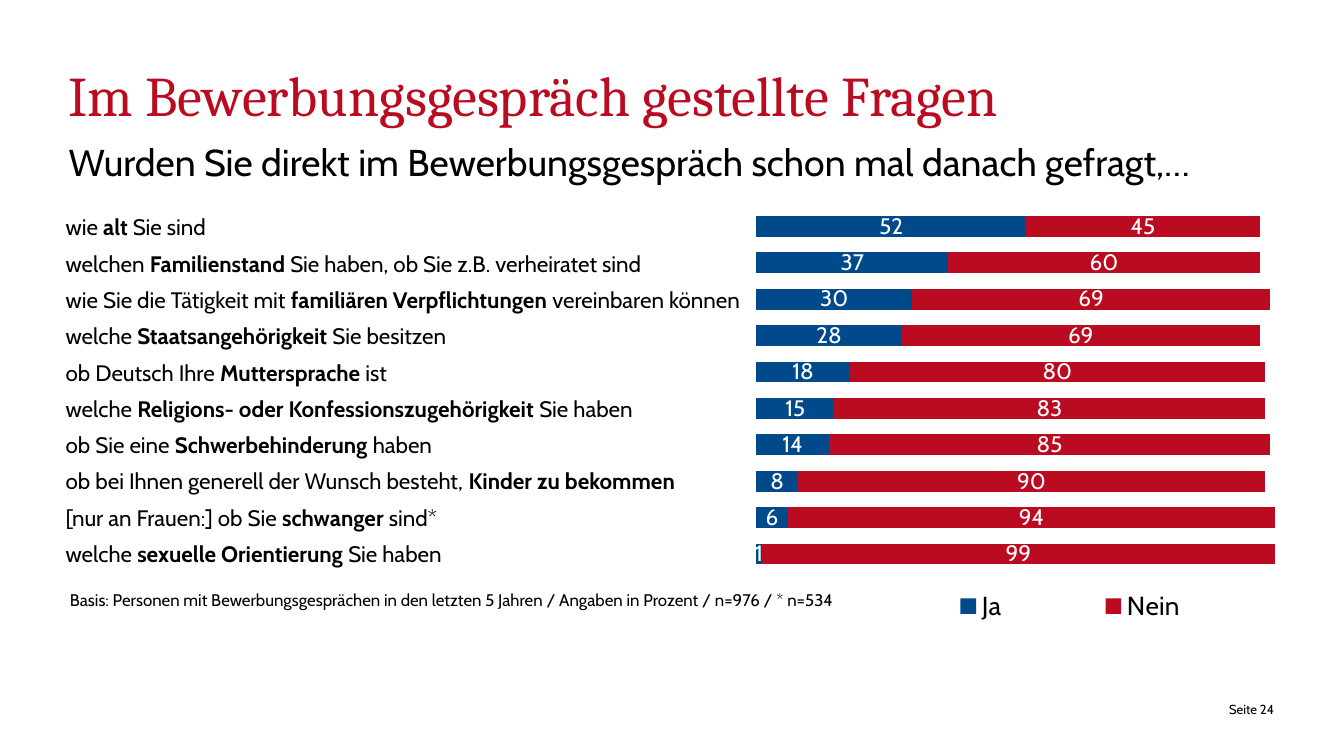
from pptx import Presentation
from pptx import util as u
from pptx.chart.data import CategoryChartData
from pptx.dml.color import RGBColor
from pptx.enum import chart as charts, text
from pptx.oxml import parse_xml
from pptx.oxml.ns import nsdecls

COLORS = {"black": "000000", "white": "FFFFFF", "red": "BB0B20", "blue": "00498B"}
QUESTIONS = [
    ("wie |alt| Sie sind", 52, 45),
    ("welchen |Familienstand| Sie haben, ob Sie z.B. verheiratet sind", 37, 60),
    ("wie Sie die Tätigkeit mit |familiären Verpflichtungen |vereinbaren können", 30, 69),
    ("welche |Staatsangehörigkeit| Sie besitzen", 28, 69),
    ("ob Deutsch Ihre |Muttersprache| ist", 18, 80),
    ("welche |Religions- oder Konfessionszugehörigkeit |Sie haben", 15, 83),
    ("ob Sie eine |Schwerbehinderung| haben", 14, 85),
    ("ob bei Ihnen generell der Wunsch besteht, |Kinder zu bekommen", 8, 90),
    ("[nur an Frauen:] ob Sie |schwanger| sind*", 6, 94),
    ("welche |sexuelle Orientierung |Sie haben", 1, 99),
]


class SlideBuilder:
    """Holds the style and the current slide and adds its elements."""

    def __init__(self, slide):
        self.slide = slide

    def style_font(self, font, size, color="black", name="Cabin"):
        font.size = u.Pt(size)
        font.name = name
        font.color.rgb = RGBColor.from_string(COLORS[color])

    def add_text(self, content, box, size, color="black", name="Cabin",
                 margins=(0, 0, 0, 0), align=text.PP_ALIGN.LEFT, spacing=None):
        shape = self.slide.shapes.add_textbox(*map(u.Inches, box))
        frame = shape.text_frame
        frame.word_wrap = True
        (frame.margin_left, frame.margin_top,
         frame.margin_right, frame.margin_bottom) = map(u.Inches, margins)
        paragraph = frame.paragraphs[0]
        paragraph.alignment = align
        paragraph.line_spacing = spacing
        self.style_font(paragraph.font, size, color, name)
        for index, part in enumerate(content.split("|")):
            run = paragraph.add_run()
            run.text = part
            if index % 2:
                run.font.bold = True

    def set_layout(self, element, x, y, width, height, inner=False):
        target = '<c:layoutTarget val="inner"/>' if inner else ""
        for old in element.findall("{*}layout"):
            element.remove(old)
        layout = parse_xml(
            f'<c:layout {nsdecls("c")}><c:manualLayout>{target}'
            '<c:xMode val="edge"/><c:yMode val="edge"/>'
            f'<c:x val="{x}"/><c:y val="{y}"/><c:w val="{width}"/><c:h val="{height}"/>'
            "</c:manualLayout></c:layout>")
        element.insert(0 if inner else 1, layout)

    def add_bars(self, rows, series_colors, box):
        data = CategoryChartData(number_format="0")
        data.categories = [str(number) for number in range(1, len(rows) + 1)]
        for column, name in enumerate(series_colors, start=1):
            data.add_series(name, [row[column] for row in reversed(rows)])
        chart = self.slide.shapes.add_chart(
            charts.XL_CHART_TYPE.BAR_STACKED, *map(u.Inches, box), data).chart
        self.style_font(chart.font, 12)
        chart.has_title = False
        chart.category_axis.visible = False
        axis = chart.value_axis
        axis.minimum_scale, axis.maximum_scale = 0, 100
        axis.has_major_gridlines = False
        axis.major_tick_mark = charts.XL_TICK_MARK.NONE
        axis.tick_label_position = charts.XL_TICK_LABEL_POSITION.NONE
        axis.format.line.fill.background()
        plot = chart.plots[0]
        plot.gap_width, plot.overlap = 75, 100
        plot.vary_by_categories = False
        for series, color in zip(plot.series, series_colors.values()):
            series.format.fill.solid()
            series.format.fill.fore_color.rgb = RGBColor.from_string(COLORS[color])
            labels = series.data_labels
            labels.show_value = True
            labels.number_format, labels.number_format_is_linked = "0", False
            labels.position = charts.XL_LABEL_POSITION.CENTER
            self.style_font(labels.font, 12, "white")
        chart.has_legend = True
        legend = chart.legend
        legend.position = charts.XL_LEGEND_POSITION.BOTTOM
        legend.include_in_layout = False
        self.style_font(legend.font, 14)
        self.set_layout(plot._element.getparent(), 0.57, 0, 0.43, 0.86, inner=True)
        self.set_layout(legend._element, 0.66, 0.88, 0.34, 0.13)


def main():
    presentation = Presentation()
    presentation.slide_width = u.Inches(10)
    presentation.slide_height = u.Inches(10) * 9 // 16
    builder = SlideBuilder(presentation.slides.add_slide(presentation.slide_layouts[6]))
    builder.add_bars(QUESTIONS, {"Ja": "blue", "Nein": "red"}, (0.51, 1.55, 8.98, 3.15))
    builder.add_text("Wurden Sie direkt im Bewerbungsgespräch schon mal danach gefragt,…",
                     (0.51, 1, 8.98, 0.47), 20, spacing=1.1)
    builder.add_text("Seite 24", (8.48, 5.17, 1, 0.16), 7, margins=(0, 0.05, 0, 0),
                     align=text.PP_ALIGN.RIGHT)
    builder.add_text("Im Bewerbungsgespräch gestellte Fragen", (0.51, 0.45, 8.98, 0.94),
                     30, "red", "Cambria")
    builder.add_text("Basis: Personen mit Bewerbungsgesprächen in den letzten 5 Jahren / "
                     "Angaben in Prozent / n=976 / * n=534",
                     (0.52, 4.37, 8.98, 0.12), 9, spacing=1.1)
    for row, (question, *_) in enumerate(QUESTIONS):
        builder.add_text(question, (0.39, 1.54 + 0.27 * row, 6.02, 0.3), 12,
                         margins=(0.1, 0.05, 0.1, 0.05))
    presentation.save("out.pptx")


if __name__ == "__main__":
    main()
